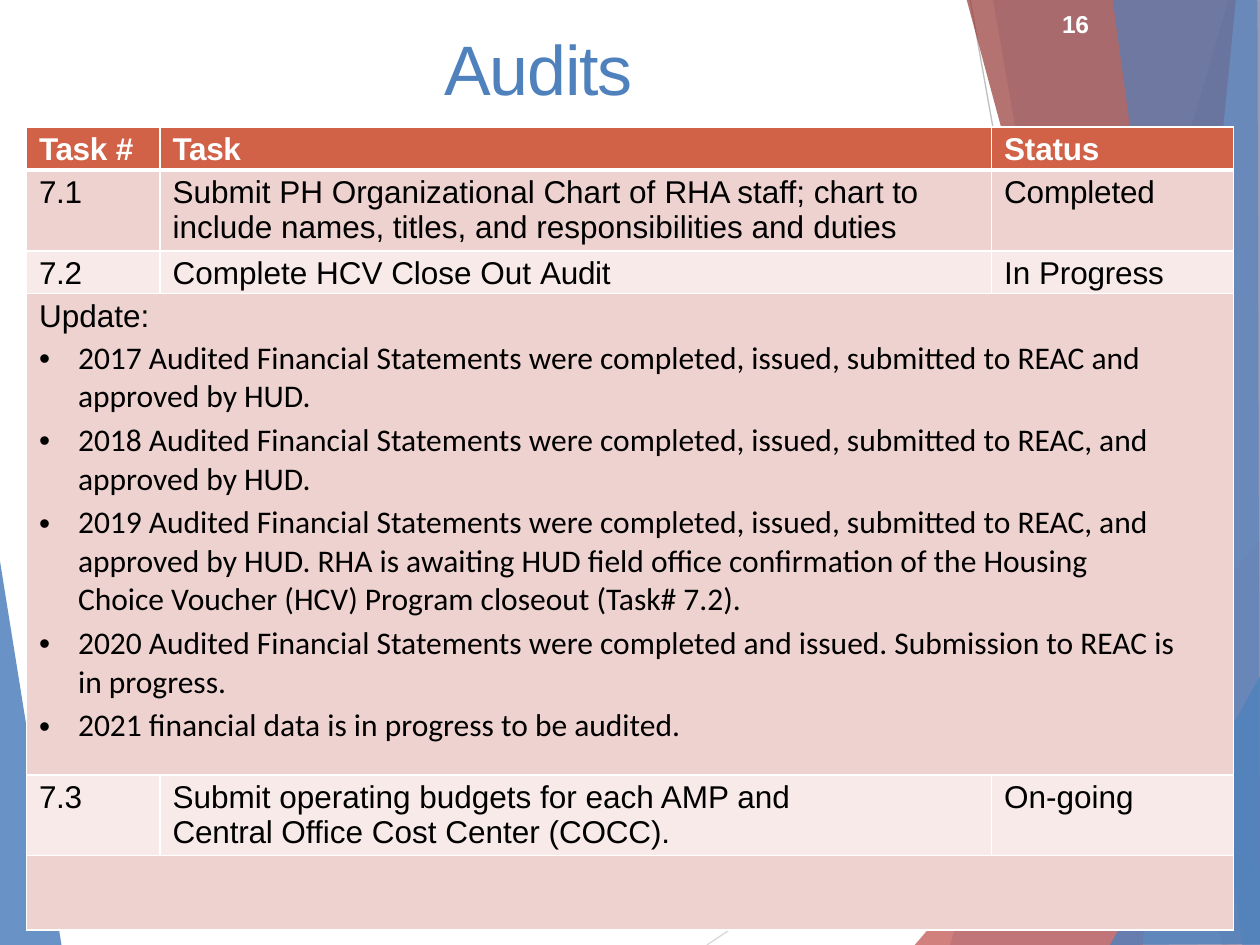
from lxml.etree import SubElement
from pptx import Presentation
from pptx.dml.color import RGBColor
from pptx.enum.shapes import MSO_CONNECTOR
from pptx.enum.text import MSO_ANCHOR, MSO_AUTO_SIZE, PP_ALIGN
from pptx.oxml.ns import qn
from pptx.util import Inches, Pt

COLORS = {
    "blue": "4F81BD", "light_blue": "95B3D7", "red": "C0504D", "dark_red": "953735",
    "pale_grey": "D9D9D9", "grey": "BFBFBF", "white": "FFFFFF", "black": "000000",
    "header": "D16248", "band": "EDD2CF", "light_band": "F7EAE9",
}

# Each facet: colour, opacity in percent, corner points in inches
FACETS = [
    ("blue", 30, [(9.75, 0), (7.54, 7.5), (10.02, 7.51), (10.01, 0.01)]),
    ("blue", 20, [(7.88, -0.01), (9.19, 7.5), (10.01, 7.5), (10.01, -0.01)]),
    ("red", 72, [(7.26, 7.5), (10, 4.29), (10.01, 7.5)]),
    ("dark_red", 70, [(7.67, -0.01), (9.7, 7.5), (10.01, 7.49), (10.01, -0.01)]),
    ("light_blue", 70, [(9.81, -0.01), (9.07, 7.5), (10.01, 7.5), (10, -0.01)]),
    ("blue", 65, [(8.83, -0.01), (9.86, 7.5), (10, 7.5), (9.98, -0.01)]),
    ("blue", 80, [(8.81, 7.5), (10.01, 5.35), (10.01, 7.49)]),
]
LEFT_FACET = ("blue", 85, [(-0.01, 4.39), (0.49, 7.51), (-0.01, 7.5)])
RAYS = [("pale_grey", (5.61, 7.5), (10.01, 4.57)), ("grey", (7.7, 0), (9.04, 7.5))]

COLUMN_WIDTHS = [1.06, 6.6, 1.92]
ROW_HEIGHTS = [0.34, 0.63, 0.34, 3.82, 0.63, 0.59]

# Every cell is a list of runs: text and letter spacing in points
HEADINGS = [[("Task ", -0.2), ("#", -0.5)], [("Task", -0.2)], [("Status", -0.1)]]
TASKS = {
    1: [[("7.1", -0.2)],
        [("Submit PH Organizational Chart of ", 0), ("RHA ", -0.1), ("staff; chart", 0),
         (" to ", -0.2), ("include names, titles, and responsibilities and ", 0),
         ("duties", -0.1)],
        [("Completed", -0.1)]],
    2: [[("7.2", -0.2)],
        [("Complete HCV Close Out ", 0), ("Audit", -0.2)],
        [("In ", 0), ("Progress", -0.1)]],
    4: [[("7.3", -0.2)],
        [("Submit operating budgets for each AMP and ", 0), ("Central ", -0.1),
         ("Office Cost Center ", 0), ("(COCC).", -0.1)],
        [("On-going", 0)]],
}
UPDATES = [
    "2017 Audited Financial Statements were completed, issued, submitted to REAC and "
    "approved by HUD.",
    "2018 Audited Financial Statements were completed, issued, submitted to REAC, and "
    "approved by HUD.",
    "2019 Audited Financial Statements were completed, issued, submitted to REAC, and "
    "approved by HUD. RHA is awaiting HUD field office confirmation of the Housing "
    "Choice Voucher (HCV) Program closeout (Task# 7.2).",
    "2020 Audited Financial Statements were completed and issued. Submission to REAC is "
    "in progress.",
    "2021 financial data is in progress to be audited.",
]
UPDATE_ROW, LAST_ROW = 3, 5


def rgb(name):
    return RGBColor.from_string(COLORS[name])


def add_facet(slide, color, opacity, points):
    corners = [(Inches(x), Inches(y)) for x, y in points]
    builder = slide.shapes.build_freeform(*corners[0], scale=1.0)
    builder.add_line_segments(corners[1:], close=True)
    facet = builder.convert_to_shape()
    facet.shadow.inherit = False
    facet.line.fill.background()
    facet.fill.solid()
    facet.fill.fore_color.rgb = rgb(color)
    srgb = facet.fill._xPr.find(".//" + qn("a:srgbClr"))
    SubElement(srgb, qn("a:alpha"), val=str(opacity * 1000))


def add_ray(slide, color, start, end):
    ray = slide.shapes.add_connector(
        MSO_CONNECTOR.STRAIGHT, *(Inches(v) for v in (*start, *end)))
    ray.line.color.rgb = rgb(color)
    ray.line.width = Pt(0.75)
    SubElement(ray._element.spPr, qn("a:effectLst"))


def add_backdrop(slide):
    add_facet(slide, *LEFT_FACET)
    for ray in RAYS:
        add_ray(slide, *ray)
    for facet in FACETS:
        add_facet(slide, *facet)


def write_runs(paragraph, runs, size, color, bold=False, font="Arial"):
    for text, spacing in runs:
        run = paragraph.add_run()
        run.text = text
        run.font.size = Pt(size)
        run.font.name = font
        run.font.bold = bold
        run.font.color.rgb = rgb(color)
        if spacing:
            run._r.get_or_add_rPr().set("spc", str(round(spacing * 100)))


def set_indent(paragraph, left, first=0, right=0):
    properties = paragraph._p.get_or_add_pPr()
    for key, value in (("marL", left), ("indent", first), ("marR", right)):
        properties.set(key, str(Inches(value)))


def write_label(shape, box, runs, size, color, bold=False):
    """Place a one-line text without margins in the given box."""
    shape.left, shape.top, shape.width, shape.height = (Inches(v) for v in box)
    frame = shape.text_frame
    frame.margin_left = frame.margin_right = frame.margin_bottom = 0
    frame.margin_top = Inches(0.01)
    frame.word_wrap = True
    frame.auto_size = MSO_AUTO_SIZE.SHAPE_TO_FIT_TEXT
    frame.vertical_anchor = MSO_ANCHOR.TOP
    paragraph = frame.paragraphs[0]
    paragraph.alignment = PP_ALIGN.LEFT
    paragraph.space_before = Pt(1)
    set_indent(paragraph, 0.01)
    write_runs(paragraph, runs, size, color, bold)


def set_borders(cell, top=1, bottom=1):
    properties = cell._tc.get_or_add_tcPr()
    sides = (("a:lnL", 1), ("a:lnR", 1), ("a:lnT", top), ("a:lnB", bottom))
    for position, (side, width) in enumerate(sides):
        line = SubElement(properties, qn(side), w=str(Pt(width)))
        fill = SubElement(line, qn("a:solidFill"))
        SubElement(fill, qn("a:srgbClr"), val=COLORS["white"])
        properties.insert(position, line)


def style_cell(cell, row):
    cell.margin_left = cell.margin_right = cell.margin_bottom = 0
    cell.margin_top = Inches(0.04)
    cell.fill.solid()
    cell.fill.fore_color.rgb = rgb(
        "header" if row == 0 else "band" if row % 2 else "light_band")
    set_borders(cell, top=3 if row == 1 else 1, bottom=3 if row == 0 else 1)


def write_cell(cell, runs, color="black", bold=False, right=0):
    paragraph = cell.text_frame.paragraphs[0]
    paragraph.space_before = Pt(3.1)
    set_indent(paragraph, 0.1, right=right)
    write_runs(paragraph, runs, 18, color, bold)


def write_updates(cell):
    write_cell(cell, [("Update:", 0)])
    for update in UPDATES:
        paragraph = cell.text_frame.add_paragraph()
        paragraph.space_before = Pt(3.1)
        set_indent(paragraph, 0.41, -0.31, right=0.44)
        properties = paragraph._p.get_or_add_pPr()
        SubElement(properties, qn("a:buFont"), typeface="Arial")
        SubElement(properties, qn("a:buChar"), char="•")
        write_runs(paragraph, [(update, 0)], 18, "black", font="Calibri")


def add_task_table(slide, box):
    table = slide.shapes.add_table(
        len(ROW_HEIGHTS), len(COLUMN_WIDTHS), *(Inches(v) for v in box)).table
    for column, width in zip(table.columns, COLUMN_WIDTHS):
        column.width = Inches(width)
    for number, (row, height) in enumerate(zip(table.rows, ROW_HEIGHTS)):
        row.height = Inches(height)
        for cell in row.cells:
            style_cell(cell, number)
    for column, heading in enumerate(HEADINGS):
        write_cell(table.cell(0, column), heading, "white", bold=True)
    for row, task in TASKS.items():
        for column, runs in enumerate(task):
            short_lines = row == 4 and column == 1
            write_cell(table.cell(row, column), runs, right=1.2 if short_lines else 0)
    for row in (UPDATE_ROW, LAST_ROW):
        table.cell(row, 0).merge(table.cell(row, len(COLUMN_WIDTHS) - 1))
    write_updates(table.cell(UPDATE_ROW, 0))


def main():
    deck = Presentation()
    deck.slide_width, deck.slide_height = Inches(10), Inches(7.5)
    slide = deck.slides.add_slide(deck.slide_layouts[5])
    add_backdrop(slide)
    write_label(slide.shapes.title, (3.52, 0.19, 3.16, 0.69), [("Audits", -0.8)], 40, "blue")
    add_task_table(slide, (0.21, 1.01, 9.58, 6.35))
    page_number = slide.shapes.add_textbox(0, 0, 0, 0)
    write_label(page_number, (8.42, 0.06, 0.24, 0.26), [("16", -0.2)], 14, "white", bold=True)
    deck.save("out.pptx")


if __name__ == "__main__":
    main()
